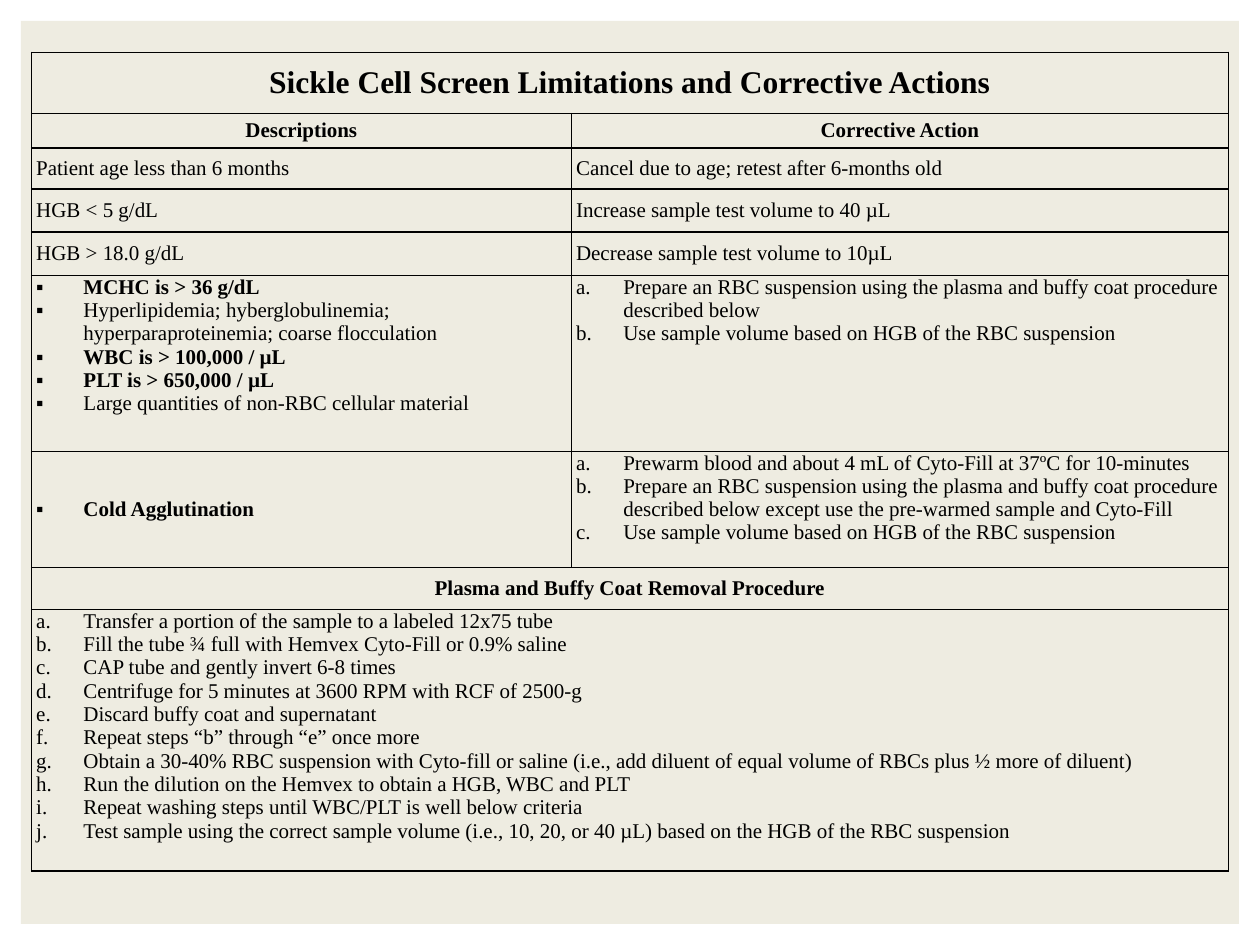
import pptx
import pptx.dml.color
import pptx.enum.shapes
import pptx.enum.text
import pptx.oxml.ns
import pptx.util
from lxml import etree

Pt = pptx.util.Pt
ALIGN = pptx.enum.text.PP_ALIGN
ANCHOR = pptx.enum.text.MSO_ANCHOR
FONT = "Times New Roman"
COLORS = {"panel": "EEECE1", "ink": "000000"}
SQUARE, LETTER = "square", "letter"

COLUMN_WIDTHS = [308.5, 375.5]
ROW_HEIGHTS = [35, 19.5, 23.5, 24.5, 25, 100.5, 66.5, 24, 149.5]

TITLE = "Sickle Cell Screen Limitations and Corrective Actions"
HEADINGS = ["Descriptions", "Corrective Action"]
SIMPLE_LIMITS = [
    ("Patient age less than 6 months", "Cancel due to age; retest after 6-months old"),
    ("HGB < 5 g/dL", "Increase sample test volume to 40 µL"),
    ("HGB > 18.0 g/dL", "Decrease sample test volume to 10µL"),
]
# Each entry of a list is (text, bold).
INTERFERENCES = [
    ("MCHC is > 36 g/dL", True),
    ("Hyperlipidemia; hyberglobulinemia; hyperparaproteinemia; coarse flocculation", False),
    ("WBC is > 100,000 / µL", True),
    ("PLT is > 650,000 / µL", True),
    ("Large quantities of non-RBC cellular material", False),
]
USE_RBC_VOLUME = "Use sample volume based on HGB of the RBC suspension"
PREPARE_RBC = "Prepare an RBC suspension using the plasma and buffy coat procedure described below"
INTERFERENCE_ACTIONS = [PREPARE_RBC, USE_RBC_VOLUME]
COLD_ACTIONS = [
    "Prewarm blood and about 4 mL of Cyto-Fill at 37ºC for 10-minutes",
    PREPARE_RBC + " except use the pre-warmed sample and Cyto-Fill",
    USE_RBC_VOLUME,
]
PROCEDURE_TITLE = "Plasma and Buffy Coat Removal Procedure"
PROCEDURE_STEPS = [
    "Transfer a portion of the sample to a labeled 12x75 tube",
    "Fill the tube ¾ full with Hemvex Cyto-Fill or 0.9% saline",
    "CAP tube and gently invert 6-8 times",
    "Centrifuge for 5 minutes at 3600 RPM with RCF of 2500-g",
    "Discard buffy coat and supernatant",
    "Repeat steps “b” through “e” once more",
    "Obtain a 30-40% RBC suspension with Cyto-fill or saline "
    "(i.e., add diluent of equal volume of RBCs plus ½ more of diluent)",
    "Run the dilution on the Hemvex to obtain a HGB, WBC and PLT",
    "Repeat washing steps until WBC/PLT is well below criteria",
    "Test sample using the correct sample volume (i.e., 10, 20, or 40 µL) "
    "based on the HGB of the RBC suspension",
]


def rgb(name):
    return pptx.dml.color.RGBColor.from_string(COLORS[name])


def add_child(parent, tag, **attributes):
    return etree.SubElement(parent, pptx.oxml.ns.qn(tag), attributes)


def add_borders(cell):
    properties = cell._tc.get_or_add_tcPr()
    for side in ("a:lnL", "a:lnR", "a:lnT", "a:lnB"):
        line = add_child(properties, side, w=str(Pt(1)))
        add_child(add_child(line, "a:solidFill"), "a:srgbClr", val=COLORS["ink"])


def add_marker(paragraph, marker):
    """Give the paragraph a hanging square bullet or letter."""
    properties = paragraph._p.get_or_add_pPr()
    properties.set("marL", str(Pt(27)))
    properties.set("indent", str(-Pt(27)))
    if marker == SQUARE:
        add_child(properties, "a:buFont", typeface=FONT)
        add_child(properties, "a:buChar", char="▪")
    else:
        add_child(properties, "a:buFont", typeface=FONT)
        add_child(properties, "a:buAutoNum", type="alphaLcPeriod")


def write_cell(cell, entries, size=12, align=ALIGN.LEFT, anchor=ANCHOR.MIDDLE, marker=None):
    """Write (text, bold) entries as the paragraphs of a cell."""
    cell.vertical_anchor = anchor
    frame = cell.text_frame
    for index, (text, bold) in enumerate(entries):
        paragraph = frame.add_paragraph() if index else frame.paragraphs[0]
        paragraph.alignment = align
        if marker:
            add_marker(paragraph, marker)
        run = paragraph.add_run()
        run.text = text
        run.font.name = FONT
        run.font.size = Pt(size)
        run.font.bold = bold
        run.font.color.rgb = rgb("ink")


def write_heading(cell, text, size=12):
    write_cell(cell, [(text, True)], size, ALIGN.CENTER)


def write_steps(cell, steps):
    write_cell(cell, [(step, False) for step in steps], anchor=ANCHOR.TOP, marker=LETTER)


def add_panel(slide, left, top, width, height):
    panel = slide.shapes.add_shape(pptx.enum.shapes.MSO_SHAPE.RECTANGLE,
                                   Pt(left), Pt(top), Pt(width), Pt(height))
    panel.shadow.inherit = False
    panel.fill.solid()
    panel.fill.fore_color.rgb = rgb("panel")
    panel.line.fill.background()


def add_empty_grid(slide, left, top):
    frame = slide.shapes.add_table(len(ROW_HEIGHTS), len(COLUMN_WIDTHS), Pt(left), Pt(top),
                                   Pt(sum(COLUMN_WIDTHS)), Pt(sum(ROW_HEIGHTS)))
    grid = frame.table
    grid.first_row = grid.horz_banding = False
    for column, width in zip(grid.columns, COLUMN_WIDTHS):
        column.width = Pt(width)
    for row, height in zip(grid.rows, ROW_HEIGHTS):
        row.height = Pt(height)
    for cell in grid.iter_cells():
        cell.margin_left = cell.margin_right = Pt(2.7)
        cell.margin_top = cell.margin_bottom = Pt(0)
        add_borders(cell)
        cell.fill.background()
    return grid


def add_limitations_table(slide, left, top):
    grid = add_empty_grid(slide, left, top)
    for row in (0, 7, 8):
        grid.cell(row, 0).merge(grid.cell(row, 1))

    write_heading(grid.cell(0, 0), TITLE, 18)
    for column, heading in enumerate(HEADINGS):
        write_heading(grid.cell(1, column), heading)
    for row, limit in enumerate(SIMPLE_LIMITS, start=2):
        for column, text in enumerate(limit):
            write_cell(grid.cell(row, column), [(text, False)])

    write_cell(grid.cell(5, 0), INTERFERENCES, anchor=ANCHOR.TOP, marker=SQUARE)
    write_steps(grid.cell(5, 1), INTERFERENCE_ACTIONS)
    write_cell(grid.cell(6, 0), [("Cold Agglutination", True)], marker=SQUARE)
    write_steps(grid.cell(6, 1), COLD_ACTIONS)
    write_heading(grid.cell(7, 0), PROCEDURE_TITLE)
    write_steps(grid.cell(8, 0), PROCEDURE_STEPS)


def main():
    deck = pptx.Presentation()
    deck.slide_width, deck.slide_height = Pt(720), Pt(540)
    slide = deck.slides.add_slide(deck.slide_layouts[6])
    add_panel(slide, 12, 12, 696, 516)
    add_limitations_table(slide, 18, 30)
    deck.save("out.pptx")


if __name__ == "__main__":
    main()
